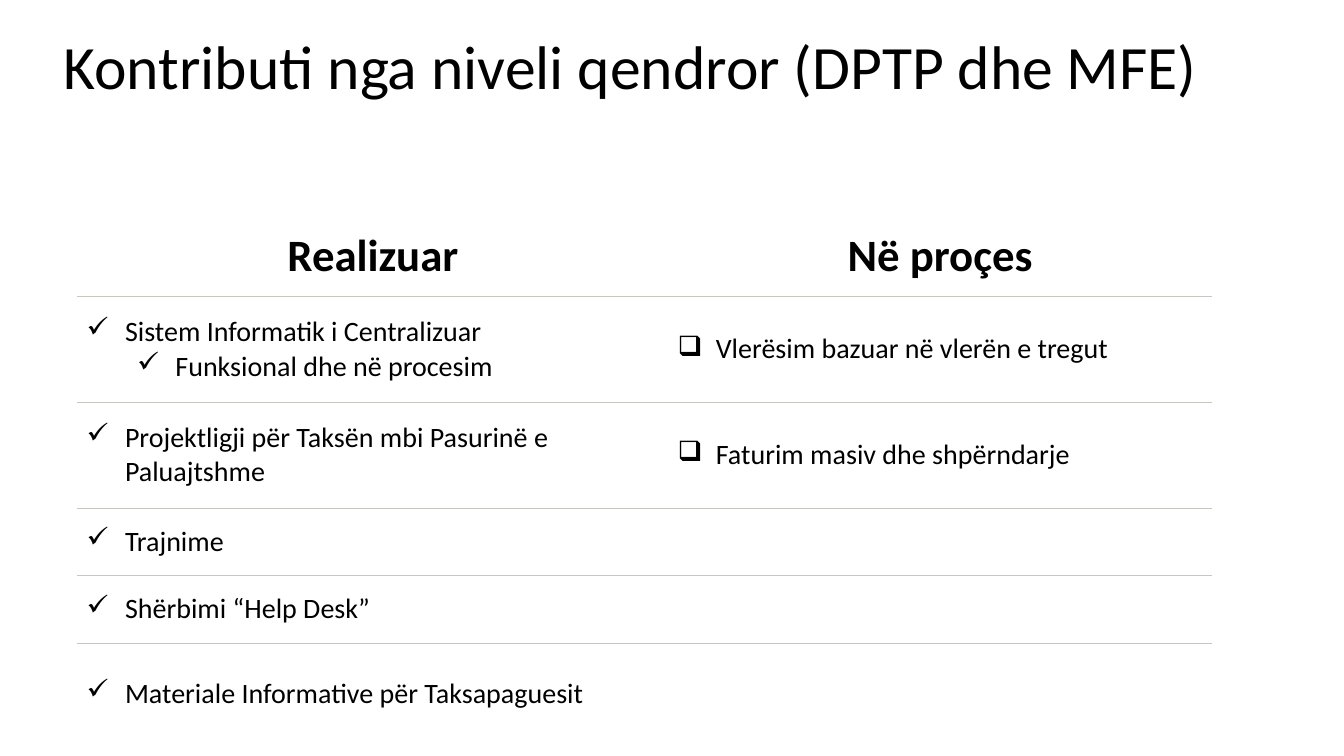
"""Build the slide on central-level contributions: done and in process."""
from dataclasses import dataclass

from lxml import etree
from pptx import Presentation, util as u
from pptx.dml.color import RGBColor
from pptx.enum import text
from pptx.oxml import ns

PX = 9144


@dataclass(frozen=True)
class Theme:
    """Colours and type sizes."""
    font: str = "Calibri"
    ink: str = "000000"
    paper: str = "FFFFFF"
    rule: str = "C7C6C1"
    title_size: int = 44
    header_size: int = 32
    body_size: int = 20
    paper_line: float = 1
    rule_line: float = 0.45


@dataclass(frozen=True)
class Entry:
    """One paragraph of a table cell."""
    words: str
    bullet: str = ""
    level: int = 0


THEME = Theme()
DONE, PENDING = "✓", "❑"
COLUMN_WIDTHS = (586, 539)
ROW_HEIGHTS = (80, 105, 105, 67, 67, 101)
HANGING = 38
LEVEL_STEP = 50

ROWS: list[tuple[list[Entry], list[Entry]]] = [
    ([Entry("Realizuar")], [Entry("Në proçes")]),
    ([Entry("Sistem Informatik i Centralizuar", DONE),
      Entry("Funksional dhe në procesim", DONE, 1)],
     [Entry("Vlerësim bazuar në vlerën e tregut", PENDING)]),
    ([Entry("Projektligji për Taksën mbi Pasurinë e Paluajtshme", DONE)],
     [Entry("Faturim masiv dhe shpërndarje", PENDING)]),
    ([Entry("Trajnime", DONE)], []),
    ([Entry("Shërbimi “Help Desk”", DONE)], []),
    ([Entry("Materiale Informative për Taksapaguesit", DONE)], []),
]


def px(length: int) -> u.Emu:
    """Turn px into EMU."""
    return u.Emu(length * PX)


def style_runs(paragraph, size: int, bold: bool = False) -> None:
    """Give every run of a paragraph the theme font."""
    for run in paragraph.runs:
        run.font.name = THEME.font
        run.font.size = u.Pt(size)
        run.font.bold = bold
        run.font.color.rgb = RGBColor.from_string(THEME.ink)


def add_bullet(paragraph, entry: Entry) -> None:
    """Set a hanging bullet on a paragraph."""
    paragraph.level = entry.level
    properties = paragraph._p.get_or_add_pPr()
    properties.set("marL", str(px(HANGING + LEVEL_STEP * entry.level)))
    properties.set("indent", str(px(-HANGING)))
    etree.SubElement(properties, ns.qn("a:buChar"), char=entry.bullet)


def add_border(cell, side: str, color: str, points: float) -> None:
    """Draw one border of a cell."""
    line = etree.SubElement(cell._tc.get_or_add_tcPr(), ns.qn(f"a:ln{side}"),
                            w=str(u.Pt(points)))
    fill = etree.SubElement(line, ns.qn("a:solidFill"))
    etree.SubElement(fill, ns.qn("a:srgbClr"), val=color)


def fill_cell(cell, entries: list[Entry], row: int) -> None:
    """Write and format one table cell."""
    cell.vertical_anchor = text.MSO_ANCHOR.MIDDLE
    cell.margin_left = cell.margin_right = px(9)
    cell.margin_top = cell.margin_bottom = px(4)
    ruled = {"T": row > 0, "B": row < len(ROWS) - 1}
    for side in "LRTB":
        if ruled.get(side, False):
            add_border(cell, side, THEME.rule, THEME.rule_line)
        else:
            add_border(cell, side, THEME.paper, THEME.paper_line)
    cell.fill.background()
    frame = cell.text_frame
    for index, entry in enumerate(entries):
        paragraph = frame.add_paragraph() if index else frame.paragraphs[0]
        paragraph.text = entry.words
        if entry.bullet:
            add_bullet(paragraph, entry)
            style_runs(paragraph, THEME.body_size)
        else:
            paragraph.alignment = text.PP_ALIGN.CENTER
            style_runs(paragraph, THEME.header_size, bold=True)


def place_title(title) -> None:
    """Move, write and format the title placeholder."""
    title.left, title.top, title.width, title.height = map(px, (53, 31, 1150, 145))
    frame = title.text_frame
    frame.text = "Kontributi nga niveli qendror (DPTP dhe MFE)"
    frame.word_wrap = True
    frame.auto_size = text.MSO_AUTO_SIZE.NONE
    frame.vertical_anchor = text.MSO_ANCHOR.TOP
    heading = frame.paragraphs[0]
    heading.alignment = text.PP_ALIGN.LEFT
    heading.line_spacing = 0.9
    style_runs(heading, THEME.title_size)


def add_progress_table(slide) -> None:
    """Add the table of finished and ongoing work."""
    progress = slide.shapes.add_table(
        len(ROWS), len(COLUMN_WIDTHS), px(77), px(214),
        px(sum(COLUMN_WIDTHS)), px(sum(ROW_HEIGHTS))).table
    progress.first_row = progress.horz_banding = False
    for column, width in zip(progress.columns, COLUMN_WIDTHS):
        column.width = px(width)
    for row, (cells, height) in enumerate(zip(ROWS, ROW_HEIGHTS)):
        progress.rows[row].height = px(height)
        for column, entries in enumerate(cells):
            fill_cell(progress.cell(row, column), entries, row)


def main() -> None:
    """Build and save the presentation."""
    deck = Presentation()
    deck.slide_width, deck.slide_height = px(1333), px(750)
    slide = deck.slides.add_slide(deck.slide_layouts[5])
    place_title(slide.shapes.title)
    add_progress_table(slide)
    deck.save("out.pptx")


if __name__ == "__main__":
    main()
